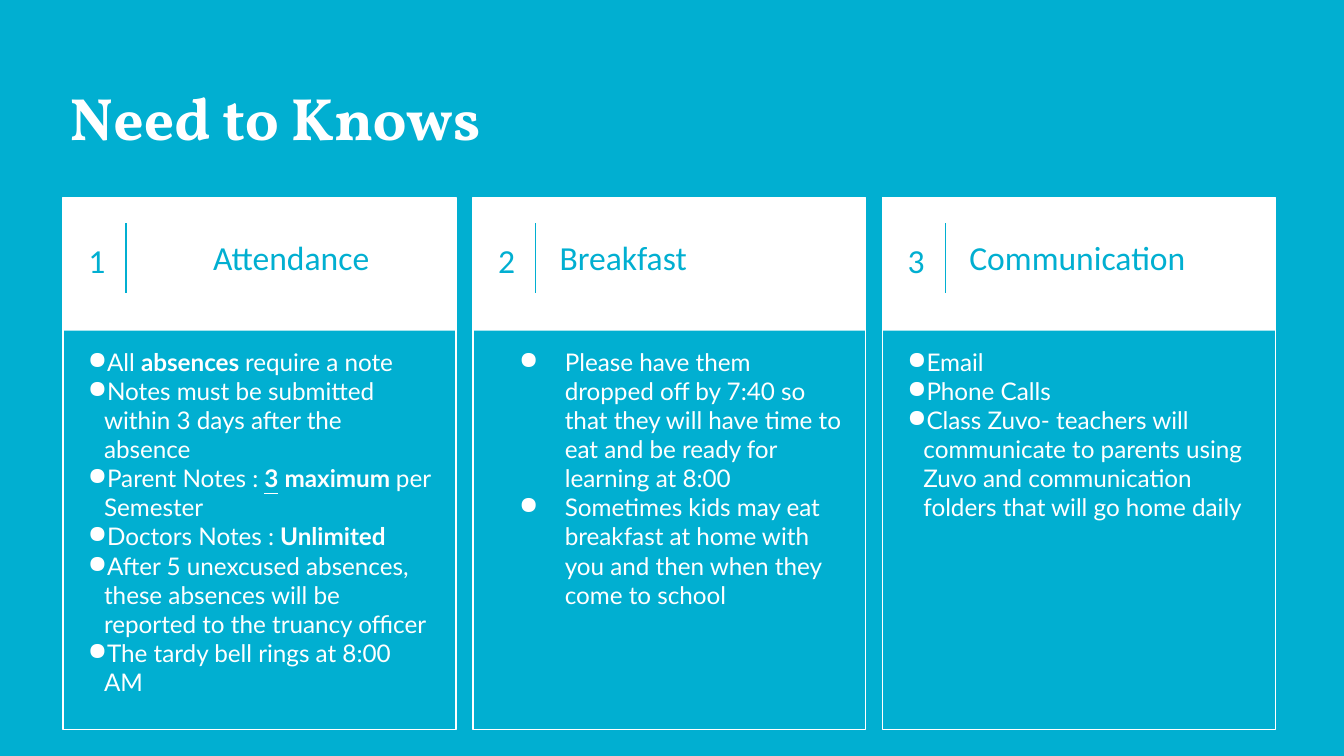
from lxml import etree
from pptx import Presentation
from pptx.dml.color import RGBColor
from pptx.enum import shapes, text
from pptx.oxml.ns import qn
from pptx.util import Pt

# Content: each bullet is a list of (text, style) runs
TITLE = "Need to Knows"
TIGHT, WIDE = (8.64, -10.8), (36, -24.5)  # left margin, first-line indent
COLUMNS = [
    dict(heading="Attendance", align="CENTER", indent=TIGHT, bullets=[
        [("All ", ""), ("absences ", "b"), ("require a note", "")],
        [("Notes must be submitted within 3 days after the absence", "")],
        [("Parent Notes : ", ""), ("3", "bu"), (" ", ""),
         ("maximum ", "b"), ("per Semester", "")],
        [("Doctors Notes : ", ""), ("Unlimited", "b")],
        [("After 5 unexcused absences, these absences will be reported "
          "to the truancy officer", "")],
        [("The tardy bell rings at 8:00 AM", "")],
    ]),
    dict(heading="Breakfast", align="LEFT", indent=WIDE, bullets=[
        [("Please have them dropped off by 7:40 so that they will have time "
          "to eat and be ready for learning at 8:00", "")],
        [("Sometimes kids may eat breakfast at home with you and then when "
          "they come to school", "")],
    ]),
    dict(heading="Communication", align="LEFT", indent=TIGHT, bullets=[
        [("Email", "")],
        [("Phone Calls", "")],
        [("Class Zuvo- teachers will communicate to parents using Zuvo and "
          "communication folders that will go home daily", "")],
    ]),
]

# Layout in points
BLUE, WHITE = "01AFD1", "FFFFFF"
LEFT, PITCH, TOP = 33.84, 219.5, 105.84
CARD_W, CARD_H, HEADER_H = 210.5, 285.1, 71.3


def color(hex_value):
    return RGBColor.from_string(hex_value)


def add_bullet(paragraph, indent):
    props = paragraph._p.get_or_add_pPr()
    props.set("marL", str(Pt(indent[0])))
    props.set("indent", str(Pt(indent[1])))
    bullet_color = etree.SubElement(props, qn("a:buClr"))
    etree.SubElement(bullet_color, qn("a:srgbClr"), val=WHITE)
    etree.SubElement(props, qn("a:buChar"), char="●")


def write(box, paragraphs, *, size, font, ink, bold=False, align="LEFT",
          anchor="TOP", spacing=None, indent=None):
    frame = box.text_frame
    frame.word_wrap = True
    frame.auto_size = text.MSO_AUTO_SIZE.NONE
    frame.vertical_anchor = text.MSO_ANCHOR[anchor]
    frame.margin_left = frame.margin_right = Pt(7.2)
    frame.margin_top = frame.margin_bottom = Pt(7.2)
    for index, runs in enumerate(paragraphs):
        paragraph = frame.add_paragraph() if index else frame.paragraphs[0]
        paragraph.alignment = text.PP_ALIGN[align]
        if spacing:
            paragraph.line_spacing = spacing
        if indent:
            add_bullet(paragraph, indent)
        for words, style in runs:
            run = paragraph.add_run()
            run.text = words
            run.font.name, run.font.size = font, Pt(size)
            run.font.color.rgb = color(ink)
            run.font.bold = bold or "b" in style
            run.font.underline = "u" in style


def add_text(slide, x, y, w, h, paragraphs, **style):
    box = slide.shapes.add_textbox(Pt(x), Pt(y), Pt(w), Pt(h))
    write(box, paragraphs, **style)


def add_card(slide, x):
    group = slide.shapes.add_group_shape()
    for height, filled in ((CARD_H, False), (HEADER_H, True)):
        panel = group.shapes.add_shape(shapes.MSO_SHAPE.RECTANGLE,
                                       Pt(x), Pt(TOP), Pt(CARD_W), Pt(height))
        panel.shadow.inherit = False
        if filled:
            panel.fill.solid()
            panel.fill.fore_color.rgb = color(WHITE)
            panel.line.fill.background()
        else:
            panel.fill.background()
            panel.line.color.rgb = color(WHITE)
            panel.line.width = Pt(0.75)


def add_divider(slide, x):
    divider = slide.shapes.add_connector(shapes.MSO_CONNECTOR.STRAIGHT,
                                         Pt(x), Pt(119.5), Pt(x), Pt(157))
    divider.line.color.rgb = color(BLUE)
    divider.line.width = Pt(0.75)
    etree.SubElement(divider._element.spPr, qn("a:effectLst"))


def main():
    deck = Presentation()
    deck.slide_width, deck.slide_height = Pt(720), Pt(405)
    slide = deck.slides.add_slide(deck.slide_layouts[5])
    slide.background.fill.solid()
    slide.background.fill.fore_color.rgb = color(BLUE)

    # Title
    title = slide.shapes.title
    title.left, title.top = Pt(30.24), Pt(36)
    title.width, title.height = Pt(658.8), Pt(54)
    write(title, [[(TITLE, "")]], size=32, font="Vollkorn", ink=WHITE,
          bold=True)

    # Numbered columns
    header = dict(size=18, font="Calibri", ink=BLUE, anchor="MIDDLE")
    for index, column in enumerate(COLUMNS):
        x = LEFT + index * PITCH
        add_card(slide, x)
        add_text(slide, x + 4.3, 105.2, 27.4, 64.8, [[(str(index + 1), "")]],
                 align="CENTER", spacing=1.15, **header)
        add_divider(slide, x + 33.6)
        add_text(slide, x + 39.4, 105.4, 165.6, 64.8,
                 [[(column["heading"], "")]], align=column["align"], **header)
        add_text(slide, x + 6.2, 178.6, 199.4, 187.2, column["bullets"],
                 size=13, font="Lato", ink=WHITE, indent=column["indent"])

    deck.save("out.pptx")


if __name__ == "__main__":
    main()
